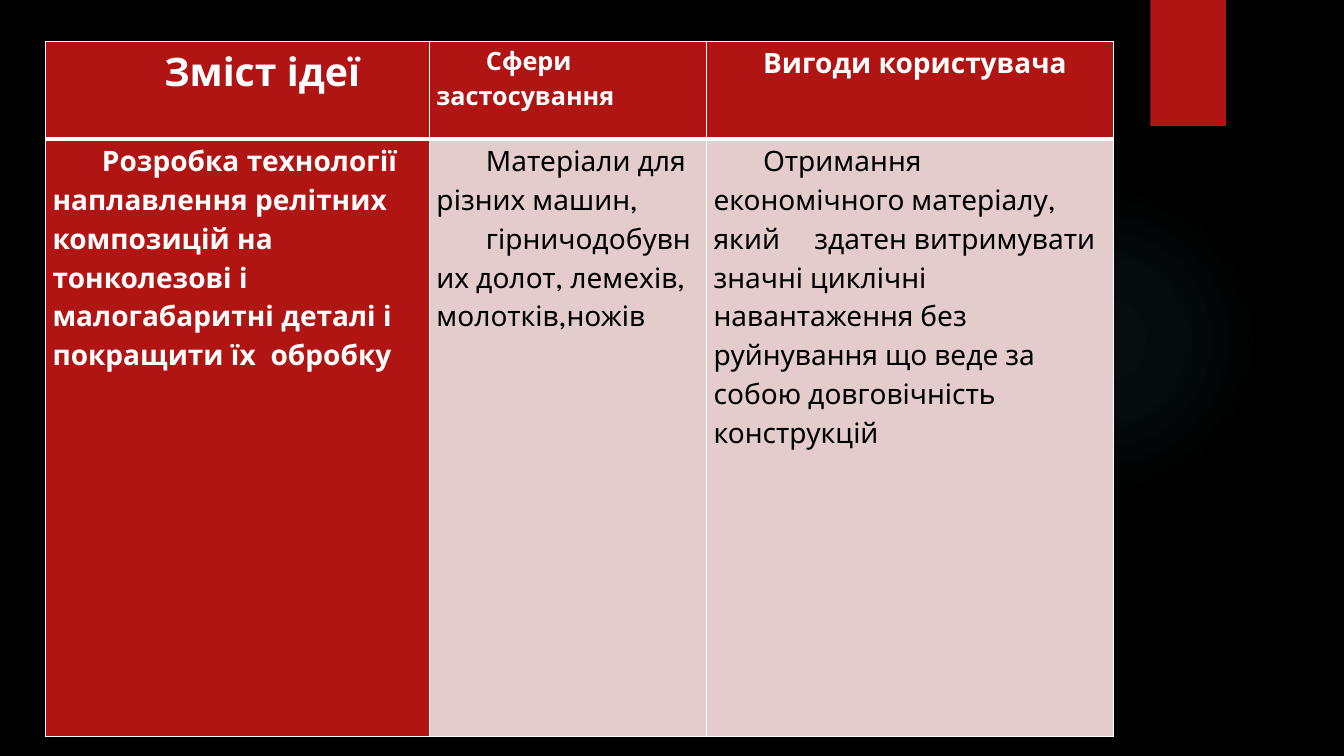
from lxml.etree import SubElement
from pptx import Presentation
from pptx.dml.color import RGBColor
from pptx.enum.shapes import MSO_SHAPE
from pptx.enum.text import PP_ALIGN
from pptx.oxml.ns import qn
from pptx.util import Inches, Pt

BLACK = RGBColor(0x00, 0x00, 0x00)
WHITE = RGBColor(0xFF, 0xFF, 0xFF)
RED = RGBColor(0xB0, 0x15, 0x13)
PINK = RGBColor(0xE4, 0xCC, 0xCC)
TEAL = RGBColor(0x50, 0xB9, 0xC1)

FONT = "League Spartan"
WIDTH, HEIGHT = Inches(13.33), Inches(7.5)

# Table grid, in percent of the slide's width and height
COLUMNS = [28.57, 20.62, 30.3]
ROWS = [12.93, 79.07]

# Rows of cells: paragraphs, size, bold, text colour, fill, alignment
CELLS = [
    [
        (["Зміст ідеї"], 28, True, WHITE, RED, PP_ALIGN.CENTER),
        (["Сфери застосування"], 18, True, WHITE, RED, PP_ALIGN.JUSTIFY),
        (["Вигоди користувача"], 20, True, WHITE, RED, PP_ALIGN.JUSTIFY),
    ],
    [
        (["Розробка технології наплавлення релітних композицій на тонколезові "
          "і малогабаритні деталі і покращити їх  обробку"],
         20, True, WHITE, RED, PP_ALIGN.LEFT),
        (["Матеріали для різних машин,",
          "гірничодобувних долот, лемехів, молотків,ножів"],
         20, False, BLACK, PINK, PP_ALIGN.LEFT),
        (["Отримання економічного матеріалу,\tякий\tздатен витримувати значні "
          "циклічні навантаження без руйнування що веде за собою "
          "довговічність конструкцій"],
         20, False, BLACK, PINK, PP_ALIGN.LEFT),
    ],
]


def across(percent):
    return int(WIDTH * percent / 100)


def down(percent):
    return int(HEIGHT * percent / 100)


def add_plain_shape(s, kind, left, top, width, height):
    sp = s.shapes.add_shape(kind, across(left), down(top), across(width), down(height))
    sp.shadow.inherit = False
    sp.line.fill.background()
    return sp


def add_color(parent, color, alpha=100):
    clr = SubElement(parent, qn("a:srgbClr"), val=str(color))
    if alpha < 100:
        SubElement(clr, qn("a:alpha"), val=str(alpha * 1000))


def fill_glow(sp, color, stops):
    spPr = sp._element.spPr
    grad = SubElement(spPr, qn("a:gradFill"))
    gs_list = SubElement(grad, qn("a:gsLst"))
    for pos, alpha in stops:
        add_color(SubElement(gs_list, qn("a:gs"), pos=str(pos * 1000)), color, alpha)
    circle = SubElement(grad, qn("a:path"), path="circle")
    SubElement(circle, qn("a:fillToRect"), dict.fromkeys("ltrb", "50000"))
    spPr.find(qn("a:prstGeom")).addnext(grad)


def set_borders(cell, widths):
    tcPr = cell._tc.get_or_add_tcPr()
    for i, (side, width) in enumerate(widths.items()):
        ln = SubElement(tcPr, qn(f"a:ln{side}"), w=str(Pt(width)))
        add_color(SubElement(ln, qn("a:solidFill")), WHITE)
        tcPr.insert(i, ln)


def fill_cell(cell, paragraphs, size, bold, color, fill, align):
    inset = across(0.53)
    margins = {"margin_left": inset, "margin_right": inset,
               "margin_top": 0, "margin_bottom": 0}
    for name, value in margins.items():
        setattr(cell, name, value)
    cell.fill.solid()
    cell.fill.fore_color.rgb = fill
    tf = cell.text_frame
    for i, text in enumerate(paragraphs):
        p = tf.add_paragraph() if i else tf.paragraphs[0]
        pPr = p._p.get_or_add_pPr()
        pPr.set("marL", "0")
        pPr.set("indent", str(across(3.68)))
        p.alignment, p.line_spacing = align, 1.5
        r = p.add_run()
        r.text = text
        for name, value in {"name": FONT, "size": Pt(size), "bold": bold}.items():
            setattr(r.font, name, value)
        r.font.color.rgb = color


def add_idea_table(s, left, top):
    frame = s.shapes.add_table(len(ROWS), len(COLUMNS), across(left), down(top),
                               across(sum(COLUMNS)), down(sum(ROWS)))
    table = frame.table
    table.horz_banding = False
    for column, share in zip(table.columns, COLUMNS):
        column.width = across(share)
    for row, share in zip(table.rows, ROWS):
        row.height = down(share)
    for i, row in enumerate(CELLS):
        # A heavy rule separates the header from the body
        top_line, bottom_line = (1, 3) if i == 0 else (3, 1)
        for j, content in enumerate(row):
            cell = table.cell(i, j)
            fill_cell(cell, *content)
            set_borders(cell, {"L": 1, "R": 1, "T": top_line, "B": bottom_line})


def main():
    prs = Presentation()
    prs.slide_width, prs.slide_height = WIDTH, HEIGHT
    s = prs.slides.add_slide(prs.slide_layouts[6])
    s.background.fill.solid()
    s.background.fill.fore_color.rgb = BLACK

    # Soft glow and red tab
    glow = add_plain_shape(s, MSO_SHAPE.OVAL, 70.58, 24.4, 23.1, 41.07)
    fill_glow(glow, TEAL, [(0, 7), (36, 6), (69, 0)])
    tab = add_plain_shape(s, MSO_SHAPE.RECTANGLE, 85.6, 0, 5.62, 16.67)
    tab.fill.solid()
    tab.fill.fore_color.rgb = RED

    # Idea, fields of use and benefits
    add_idea_table(s, 3.38, 5.47)
    prs.save("out.pptx")


if __name__ == "__main__":
    main()
